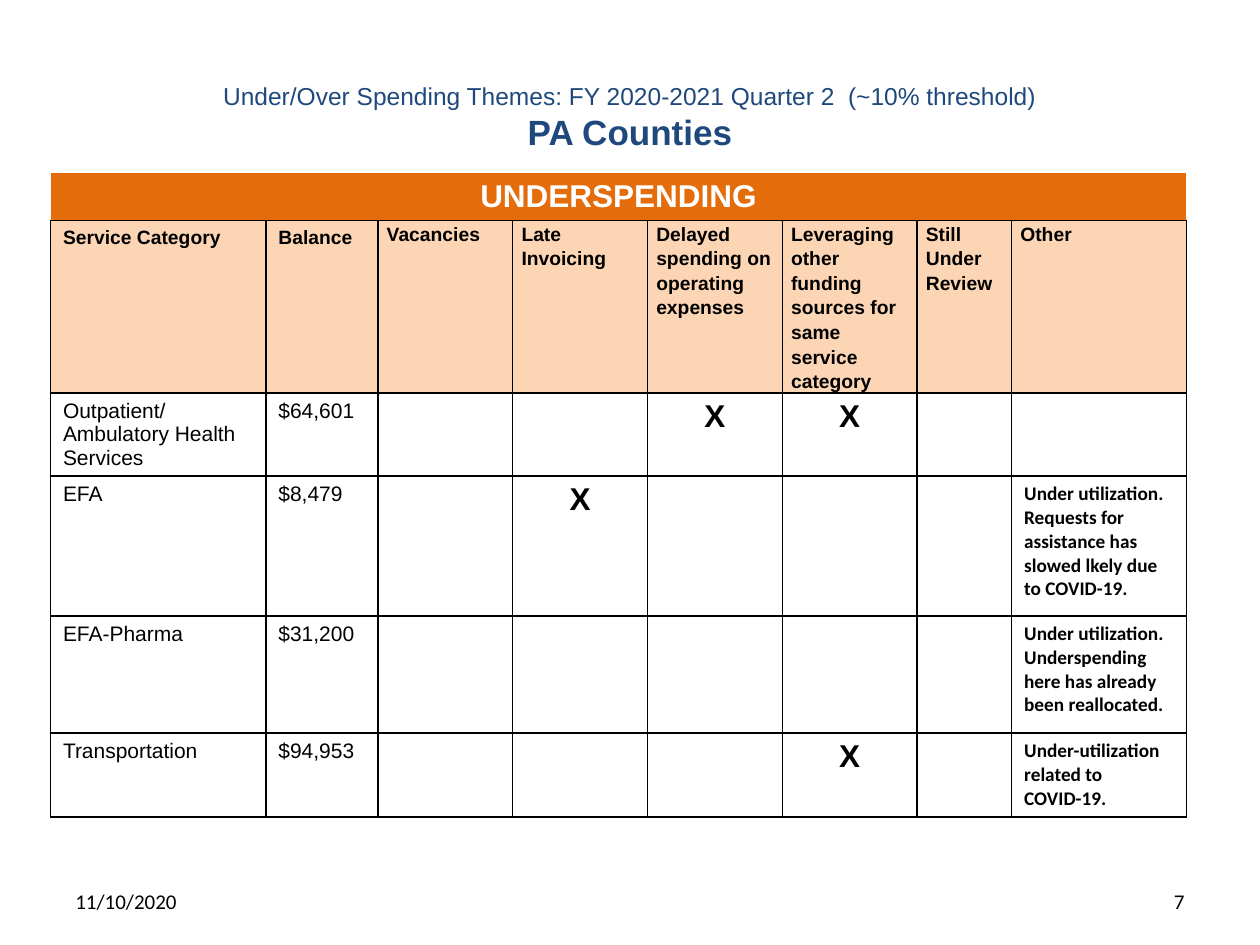
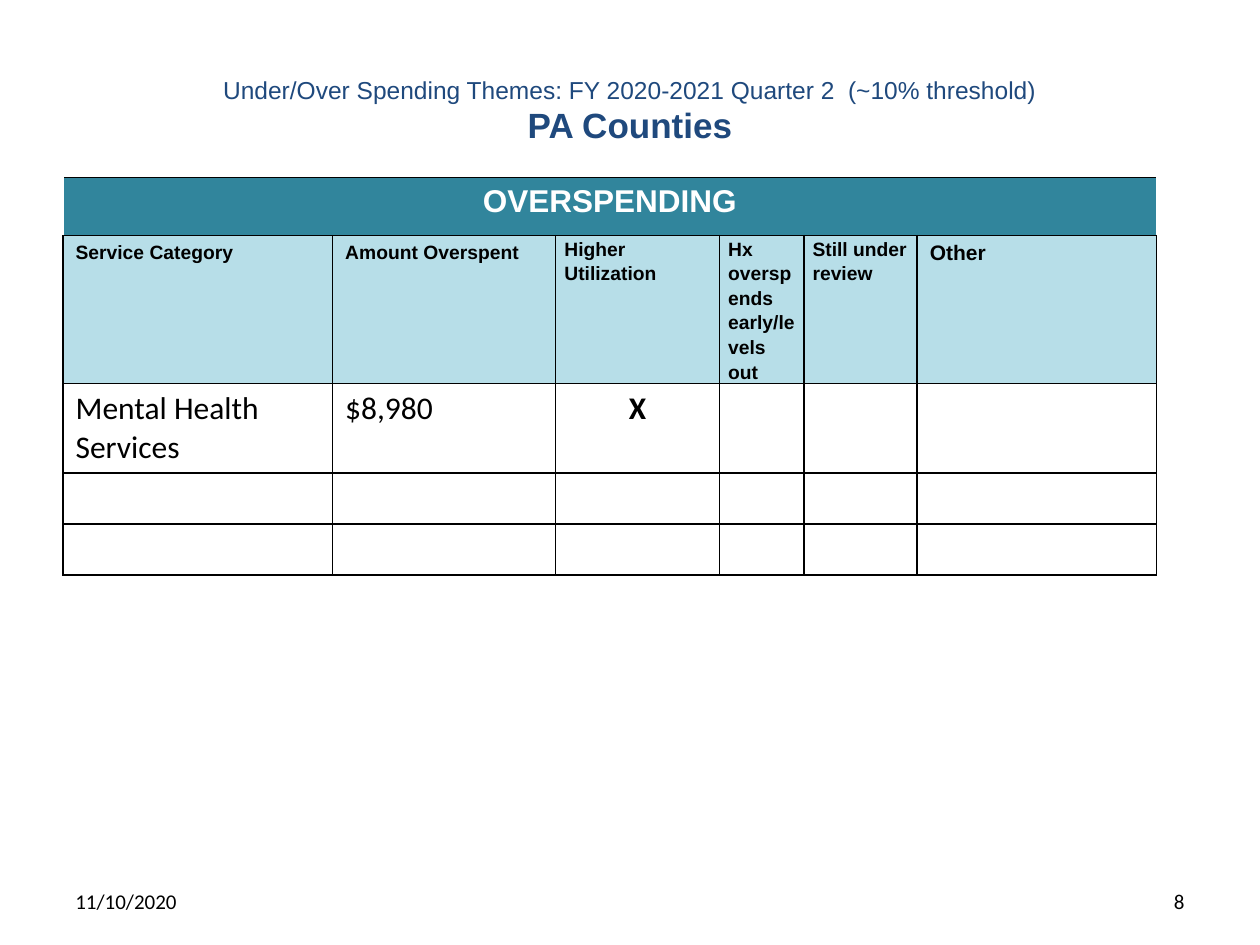
from copy import deepcopy
from dataclasses import dataclass
from typing import NamedTuple

from lxml.etree import SubElement as sub
from pptx import Presentation
from pptx.dml.color import RGBColor
from pptx.enum.text import MSO_ANCHOR as Anchor, PP_ALIGN as Align
from pptx.oxml.ns import qn
from pptx.util import Emu, Pt

SCALE = 9144
BLACK, WHITE, NAVY = "000000", "FFFFFF", "1F497D"
TOPIC = "Under/Over Spending Themes: FY 2020-2021 Quarter 2  (~10% threshold)"
REGION = "PA Counties"
DATE = "11/10/2020"


class Look(NamedTuple):
    size: int
    bold: bool = False
    font: str = "Arial"
    color: str = BLACK
    align: Align = Align.LEFT
    tight: bool = False


BAND = Look(18, True, color=WHITE, align=Align.CENTER)
HEAD = Look(11, True)
SLIM = HEAD._replace(tight=True)
BODY = Look(12)
NOTE = Look(11, True, "Calibri")
MARK = Look(18, True, align=Align.CENTER)
LARGE = Look(18, font="Calibri")
FOOT = Look(12, font="Calibri")
TOP = Look(14, color=NAVY, align=Align.CENTER)
MAIN = TOP._replace(size=20, bold=True)


@dataclass
class Sheet:
    number: int
    title_y: int
    left: int
    top: int
    band: str
    dark: str
    pale: str
    edge: str
    widths: list[int]
    heights: list[int]
    heads: list[str]
    head_looks: list[Look]
    rows: list[list[str]]
    body: Look
    mark: Look


SHEETS = [
    Sheet(
        7, 30, 40, 137, "UNDERSPENDING", "E46C0A", "FCD5B5", WHITE,
        [171, 89, 107, 107, 107, 107, 75, 139],
        [37, 135, 65, 111, 93, 65],
        ["Service Category", "Balance", "Vacancies", "Late Invoicing",
         "Delayed spending on operating expenses",
         "Leveraging other funding sources for same service category",
         "Still Under Review", "Other"],
        [HEAD] * 2 + [SLIM] * 6,
        [
            ["Outpatient/\nAmbulatory Health Services", "$64,601",
             "", "", "X", "X", "", ""],
            ["EFA", "$8,479", "", "X", "", "", "",
             "Under utilization. Requests for assistance "
             "has slowed lkely due to COVID-19."],
            ["EFA-Pharma", "$31,200", "", "", "", "", "",
             "Under utilization. Underspending here "
             "has already been reallocated."],
            ["Transportation", "$94,953", "", "", "", "X", "",
             "Under-utilization related to COVID-19."],
        ],
        BODY, MARK,
    ),
    Sheet(
        8, 25, 50, 141, "OVERSPENDING", "31859C", "B7DEE8", BLACK,
        [214, 177, 130, 67, 90, 190],
        [46, 88, 38, 38, 38],
        ["Service Category", "Amount Overspent", "Higher Utilization",
         "Hx overspends early/levels out", "Still under review", "Other"],
        [HEAD] * 2 + [SLIM] * 3 + [HEAD._replace(size=12)],
        [["Mental Health Services", "$8,980", "X", "", "", ""],
         [""] * 6, [""] * 6],
        LARGE, MARK._replace(font="Calibri"),
    ),
]


def px(n: int) -> Emu:
    return Emu(n * SCALE)


def tint(code: str) -> RGBColor:
    return RGBColor.from_string(code)


def style(run, look: Look) -> None:
    font = run.font
    font.name, font.size, font.bold = look.font, Pt(look.size), look.bold
    font.color.rgb = tint(look.color)


def write(frame, text: str, look: Look) -> None:
    frame.text = text
    for para in frame.paragraphs:
        para.alignment = look.align
        if look.tight:
            para.line_spacing = 1.15
        for run in para.runs:
            style(run, look)


def rule(cell, sides: dict[str, str]) -> None:
    props = cell._tc.get_or_add_tcPr()
    for side in "LRTB":
        line = sub(props, qn(f"a:ln{side}"), w=str(Pt(1)))
        fill = sub(line, qn("a:solidFill"))
        sub(fill, qn("a:srgbClr"), val=sides.get(side, BLACK))


def paint(cell, text: str, look: Look, fill: str = "",
          sides: dict[str, str] | None = None) -> None:
    rule(cell, sides or {})
    if fill:
        cell.fill.solid()
        cell.fill.fore_color.rgb = tint(fill)
    else:
        cell.fill.background()
    if look.tight:
        cell.margin_left = cell.margin_right = px(7)
        cell.margin_top = cell.margin_bottom = 0
    if text:
        write(cell.text_frame, text, look)


def add_title(slide, y: int) -> None:
    title = slide.shapes.title
    title.left, title.top, title.width, title.height = map(
        px, (50, y, 900, 125))
    frame = title.text_frame
    frame.vertical_anchor = Anchor.MIDDLE
    para = frame.paragraphs[0]
    para.text = f"{TOPIC}\v{REGION}"
    para.alignment = Align.CENTER
    for run, look in zip(para.runs, (TOP, MAIN)):
        style(run, look)
    gap = para._p.find(qn("a:br"))
    gap.append(deepcopy(para.runs[0]._r.rPr))


def add_foot(slide, x: int, text: str, align: Align) -> None:
    box = slide.shapes.add_textbox(px(x), px(695), px(233), px(40))
    frame = box.text_frame
    frame.word_wrap = True
    frame.vertical_anchor = Anchor.MIDDLE
    write(frame, text, FOOT._replace(align=align))


def add_grid(slide, sheet: Sheet) -> None:
    count = len(sheet.widths)
    table = slide.shapes.add_table(
        len(sheet.heights), count, px(sheet.left), px(sheet.top),
        px(sum(sheet.widths)), px(sum(sheet.heights))).table
    table.first_row = table.horz_banding = False
    for col, width in zip(table.columns, sheet.widths):
        col.width = px(width)
    for row, height in zip(table.rows, sheet.heights):
        row.height = px(height)

    table.cell(0, 0).merge(table.cell(0, count - 1))
    sides = {"L": WHITE, "R": WHITE, "T": sheet.edge}
    for c in range(count):
        text = "" if c else sheet.band
        paint(table.cell(0, c), text, BAND, sheet.dark, sides)
        paint(table.cell(1, c), sheet.heads[c], sheet.head_looks[c],
              sheet.pale)
    for r, row in enumerate(sheet.rows, 2):
        for c, text in enumerate(row):
            look = NOTE if c == count - 1 else sheet.body
            paint(table.cell(r, c), text,
                  sheet.mark if text == "X" else look)


def main() -> None:
    deck = Presentation()
    deck.slide_width, deck.slide_height = px(1000), px(750)
    for sheet in SHEETS:
        slide = deck.slides.add_slide(deck.slide_layouts[5])
        add_title(slide, sheet.title_y)
        add_grid(slide, sheet)
        add_foot(slide, 50, DATE, Align.LEFT)
        add_foot(slide, 717, str(sheet.number), Align.RIGHT)
    deck.save("out.pptx")


if __name__ == "__main__":
    main()
